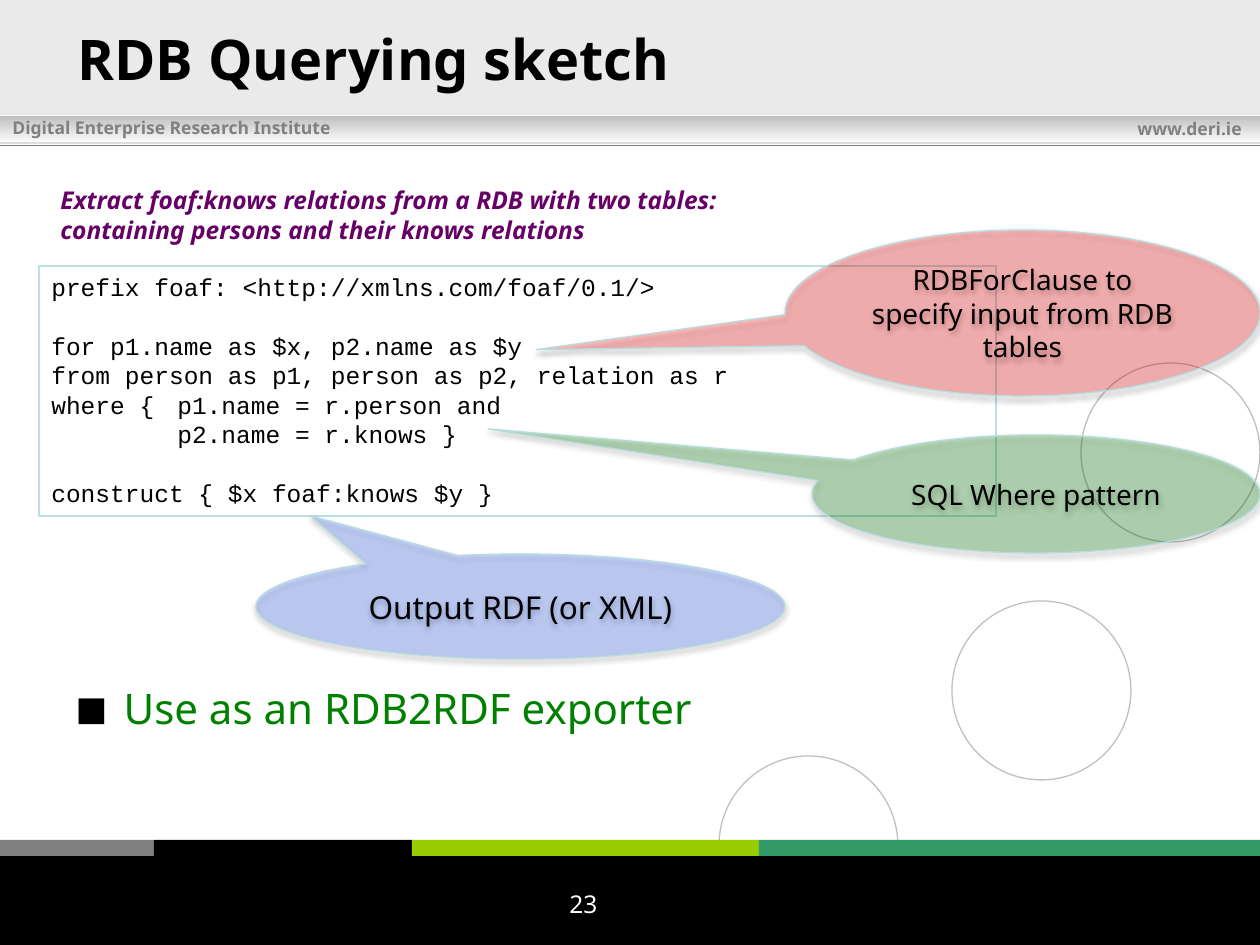
"""Build the RDB querying slide with its code sample and callouts."""
from dataclasses import dataclass
from itertools import pairwise
from typing import Optional

from lxml import etree
from pptx import Presentation
from pptx.dml.color import RGBColor
from pptx.enum.shapes import MSO_CONNECTOR, MSO_SHAPE
from pptx.enum.text import MSO_ANCHOR, MSO_AUTO_SIZE, PP_ALIGN
from pptx.oxml.ns import qn
from pptx.util import Emu, Pt

RECTANGLE = MSO_SHAPE.RECTANGLE
ELLIPSE = MSO_SHAPE.OVAL
CALLOUT = MSO_SHAPE.OVAL_CALLOUT
STRAIGHT = MSO_CONNECTOR.STRAIGHT
LEFT, CENTER = PP_ALIGN.LEFT, PP_ALIGN.CENTER
TOP, MIDDLE = MSO_ANCHOR.TOP, MSO_ANCHOR.MIDDLE
NO_AUTOFIT = MSO_AUTO_SIZE.NONE
EMU_PER_PX = 914400 / 126
SLIDE_WIDTH, SLIDE_HEIGHT = 1260, 945


@dataclass(frozen=True)
class Theme:
    sans: str = "Noto Sans"
    mono: str = "Courier New"
    black: str = "000000"
    white: str = "FFFFFF"
    header: str = "EAEAEA"
    silver: str = "C0C0C0"
    gray: str = "808080"
    rule: str = "DDDDDD"
    highlight: str = "F8F8F8"
    lime: str = "99CC00"
    teal: str = "339966"
    green: str = "008000"
    red: str = "FF0000"
    blue: str = "3366FF"
    purple: str = "660066"
    code_border: str = "BBE0E3"
    callout_border: str = "B6DCDF"
    title_size: int = 32
    bullet_size: int = 24
    large_size: int = 18
    callout_size: int = 16
    text_size: int = 14
    small_size: int = 10


@dataclass(frozen=True)
class Box:
    left: int
    top: int
    width: int
    height: int


@dataclass(frozen=True)
class Style:
    size: int
    color: str
    font: str = "Noto Sans"
    bold: bool = False
    italic: bool = False


@dataclass(frozen=True)
class Callout:
    text: str
    box: Box
    tip: tuple[float, float]
    color: str
    size: int


THEME = Theme()
CODE_BLOCKS = (
    ("prefix foaf: <http://xmlns.com/foaf/0.1/>",),
    (
        "for p1.name as $x, p2.name as $y",
        "from person as p1, person as p2, relation as r",
        "where { \tp1.name = r.person and",
        "\t\tp2.name = r.knows }",
    ),
    ("construct { $x foaf:knows $y }",),
)
CODE_LINE_HEIGHT = 16.8
CODE_TABS = (63, 126)
CIRCLE_SIZE = 179
CIRCLES = ((719, 756), (952, 601), (1081, 363))
BAND_EDGES = (0, 154, 412, 759, SLIDE_WIDTH)
BAND_COLORS = (THEME.gray, THEME.black, THEME.lime, THEME.teal)
RULES = ((145, THEME.gray, 0.5), (143, THEME.rule, 1.5), (115, THEME.highlight, 0.5))
LABELS = (
    ("Digital Enterprise Research Institute", Box(0, 111, 412, 34)),
    ("www.deri.ie", Box(1125, 112, 134, 34)),
)
CALLOUTS = (
    Callout("RDBForClause to specify input from RDB tables",
            Box(785, 230, 475, 166), (-1.024, 0.221), THEME.red, THEME.callout_size),
    Callout("SQL Where pattern",
            Box(812, 435, 448, 118), (-1.222, -0.551), THEME.green, THEME.callout_size),
    Callout("Output RDF (or XML)",
            Box(256, 554, 529, 105), (-0.397, -0.863), THEME.blue, THEME.large_size),
)


def px(length: int) -> Emu:
    return Emu(round(length * EMU_PER_PX))


def rgb(color: str) -> RGBColor:
    return RGBColor.from_string(color)


def place(box: Box) -> tuple[Emu, Emu, Emu, Emu]:
    return px(box.left), px(box.top), px(box.width), px(box.height)


def add_run(paragraph, text: str, style: Style) -> None:
    run = paragraph.add_run()
    run.text = text
    run.font.name, run.font.size = style.font, Pt(style.size)
    run.font.bold, run.font.italic = style.bold, style.italic
    run.font.color.rgb = rgb(style.color)


def write(shape, text: str, style: Style, align=LEFT, anchor=TOP) -> None:
    frame = shape.text_frame
    frame.word_wrap, frame.auto_size = True, NO_AUTOFIT
    frame.vertical_anchor = anchor
    paragraph = frame.paragraphs[0]
    paragraph.alignment = align
    paragraph.space_before = Pt(0)
    add_run(paragraph, text, style)


def add_text(slide, box: Box, text: str, style: Style) -> None:
    write(slide.shapes.add_textbox(*place(box)), text, style)


def add_shape(slide, kind, box: Box, fill: Optional[str] = None, line: Optional[str] = None):
    shape = slide.shapes.add_shape(kind, *place(box))
    shape.shadow.inherit = False
    if fill:
        shape.fill.solid()
        shape.fill.fore_color.rgb = rgb(fill)
    else:
        shape.fill.background()
    if line:
        shape.line.color.rgb = rgb(line)
        shape.line.width = Pt(0.75)
    else:
        shape.line.fill.background()
    return shape


def add_rule(slide, top: int, color: str, width: float) -> None:
    connector = slide.shapes.add_connector(STRAIGHT, px(0), px(top), px(SLIDE_WIDTH), px(top))
    connector.line.color.rgb = rgb(color)
    connector.line.width = Pt(width)
    etree.SubElement(connector.element.spPr, qn("a:effectLst"))


def add_callout(slide, callout: Callout) -> None:
    shape = add_shape(slide, CALLOUT, callout.box, callout.color, THEME.callout_border)
    shape.adjustments[0], shape.adjustments[1] = callout.tip
    properties = shape.element.spPr
    fill_color = properties.find(qn("a:solidFill")).find(qn("a:srgbClr"))
    etree.SubElement(fill_color, qn("a:alpha"), val="26000")
    shadow = etree.SubElement(properties.find(qn("a:effectLst")), qn("a:outerShdw"),
                              blurRad="40000", dist="23000", dir="5400000", rotWithShape="0")
    shadow_color = etree.SubElement(shadow, qn("a:srgbClr"), val=THEME.black)
    etree.SubElement(shadow_color, qn("a:alpha"), val="35000")
    write(shape, callout.text, Style(callout.size, THEME.black), CENTER, MIDDLE)


def add_code(slide, box: Box) -> None:
    shape = add_shape(slide, RECTANGLE, box, THEME.white, THEME.code_border)
    frame = shape.text_frame
    frame.word_wrap, frame.vertical_anchor = True, TOP
    style = Style(THEME.text_size, THEME.black, THEME.mono)
    lines = [(line, block > 0 and index == 0)
             for block, content in enumerate(CODE_BLOCKS) for index, line in enumerate(content)]
    for index, (line, starts_block) in enumerate(lines):
        paragraph = frame.add_paragraph() if index else frame.paragraphs[0]
        tabs = etree.SubElement(paragraph._p.get_or_add_pPr(), qn("a:tabLst"))
        for position in CODE_TABS:
            etree.SubElement(tabs, qn("a:tab"), pos=str(px(position)), algn="l")
        paragraph.alignment = LEFT
        paragraph.line_spacing = Pt(CODE_LINE_HEIGHT)
        paragraph.space_before = Pt(CODE_LINE_HEIGHT if starts_block else 0)
        add_run(paragraph, line, style)


def add_background(slide) -> None:
    add_shape(slide, RECTANGLE, Box(0, 0, SLIDE_WIDTH, 115), THEME.header)
    for left, top in CIRCLES:
        add_shape(slide, ELLIPSE, Box(left, top, CIRCLE_SIZE, CIRCLE_SIZE), line=THEME.silver)
    add_shape(slide, RECTANGLE, Box(0, 850, SLIDE_WIDTH, 95), THEME.black)
    for (left, right), color in zip(pairwise(BAND_EDGES), BAND_COLORS):
        add_shape(slide, RECTANGLE, Box(left, 840, right - left, 16), color)
    strip = add_shape(slide, RECTANGLE, Box(0, 116, SLIDE_WIDTH, 28))
    strip.fill.gradient()
    strip.fill.gradient_angle = 270
    for stop, color in zip(strip.fill.gradient_stops, (THEME.silver, THEME.white)):
        stop.color.rgb = rgb(color)
    for rule in RULES:
        add_rule(slide, *rule)
    for text, box in LABELS:
        add_text(slide, box, text, Style(THEME.small_size, THEME.gray, bold=True))


def fill_placeholder(placeholder, box: Box, text: str, style: Style, anchor=TOP) -> None:
    placeholder.left, placeholder.top, placeholder.width, placeholder.height = place(box)
    placeholder.element.getparent().append(placeholder.element)
    write(placeholder, text, style, anchor=anchor)


def add_bullet(paragraph) -> None:
    properties = paragraph._p.get_or_add_pPr()
    properties.set("marL", str(px(48)))
    properties.set("indent", str(-px(48)))
    color = etree.SubElement(properties, qn("a:buClr"))
    etree.SubElement(color, qn("a:srgbClr"), val=THEME.black)
    etree.SubElement(properties, qn("a:buSzPct"), val="80000")
    etree.SubElement(properties, qn("a:buFont"), typeface=THEME.sans)
    etree.SubElement(properties, qn("a:buChar"), char="■")


def main() -> None:
    presentation = Presentation()
    presentation.slide_width, presentation.slide_height = px(SLIDE_WIDTH), px(SLIDE_HEIGHT)
    slide = presentation.slides.add_slide(presentation.slide_layouts[1])
    title, body = slide.shapes.title, slide.placeholders[1]
    add_background(slide)
    add_bullet(body.text_frame.paragraphs[0])
    fill_placeholder(body, Box(63, 676, 1134, 96), "Use as an RDB2RDF exporter",
                     Style(THEME.bullet_size, THEME.green))
    fill_placeholder(title, Box(65, 0, 1071, 116), "RDB Querying sketch",
                     Style(THEME.title_size, THEME.black, bold=True), MIDDLE)
    add_code(slide, Box(39, 266, 957, 250))
    for callout in CALLOUTS:
        add_callout(slide, callout)
    add_text(slide, Box(48, 179, 793, 72),
             "Extract foaf:knows relations from a RDB with two tables: "
             "containing persons and their knows relations",
             Style(THEME.text_size, THEME.purple, bold=True, italic=True))
    add_text(slide, Box(557, 883, 146, 49), "23", Style(THEME.text_size, THEME.white))
    presentation.save("out.pptx")


if __name__ == "__main__":
    main()
